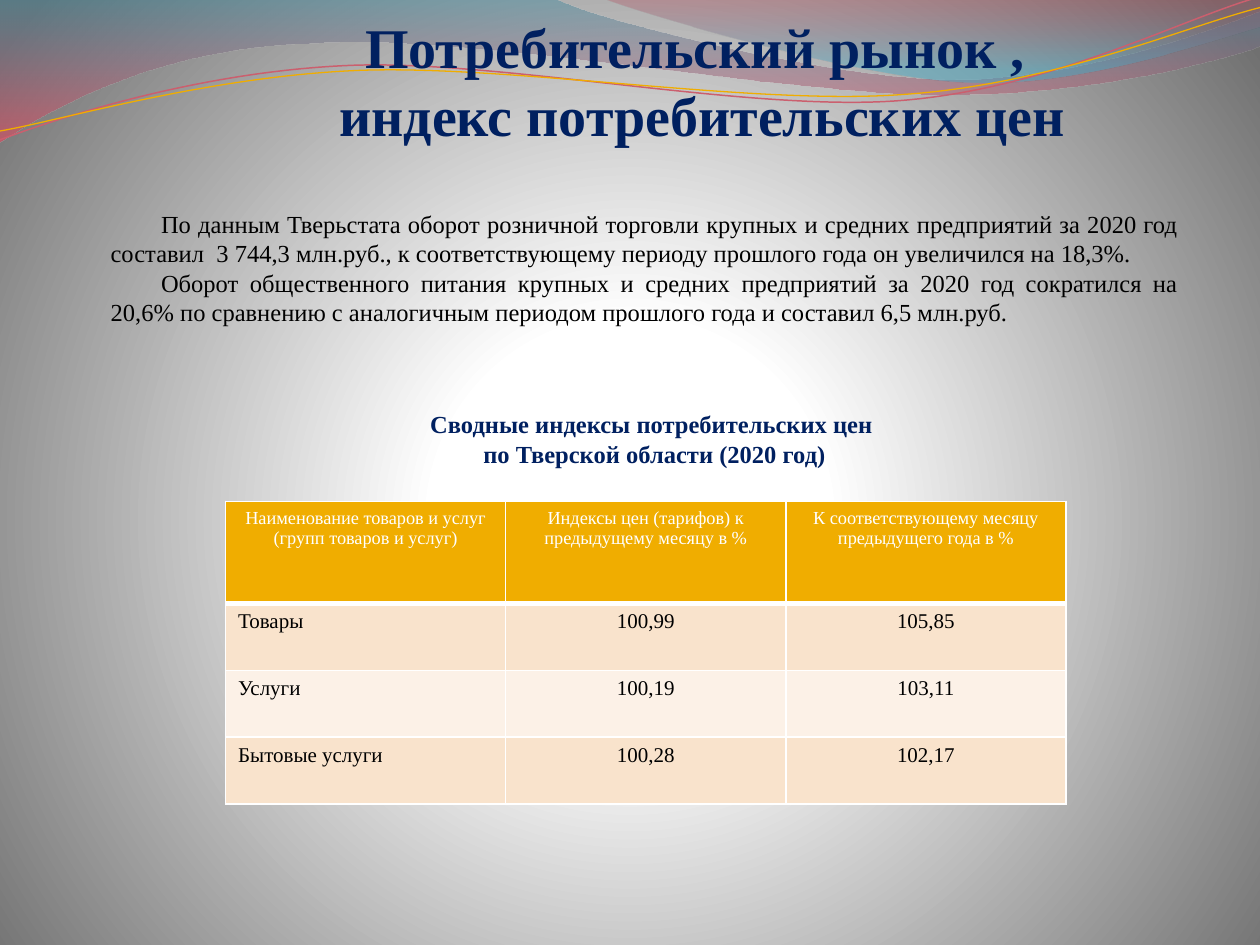
from dataclasses import dataclass

from lxml import etree
from pptx import Presentation
from pptx.dml.color import RGBColor
from pptx.enum import text as tx
from pptx.oxml import parse_xml
from pptx.oxml import ns
from pptx.util import Inches, Pt


@dataclass(frozen=True)
class Theme:
    """Colours, font and type sizes of the slide."""
    font: str = "Times New Roman"
    navy: str = "002060"
    ink: str = "000000"
    white: str = "FFFFFF"
    grey: str = "707070"
    gold: str = "F0AD00"
    rose: str = "CB5F6E"
    bands: tuple = ("F9E3CC", "FCF1E7")
    wide: tuple = ((0, "3F8A9F", 45), (100, "EF445B", 55))
    crest: tuple = ((0, "B84253", 30), (80, "42ABC7", 45))
    title: float = 32
    body: float = 14
    cell: float = 12
    head: float = 10.5


T = Theme()
MID, LEFT, FULL = tx.PP_ALIGN.CENTER, tx.PP_ALIGN.LEFT, tx.PP_ALIGN.JUSTIFY

WIDE = [(0, 0), (4.4, -0.01), (4.76, 0.17, 6.64, 0.63, 7.58, 0.63),
        (8.53, 0.63, 9.58, 0.26, 10, 0.09), (10.01, 0.36),
        (9.83, 0.44, 8.7, 0.76, 7.46, 0.75),
        (6.22, 0.75, 3.82, 0.28, 2.57, 0.34),
        (1.29, 0.36, 0.46, 0.83, -0.01, 1.13), (0, 0)]
CREST = [(4.79, -0.01), (5.09, 0.11, 6.82, 0.62, 7.69, 0.65),
         (8.56, 0.69, 9.61, 0.32, 10, 0.21), (10, 0), (4.79, -0.01)]
ROSE = [(0, 1.11), (0.48, 0.93, 1.58, 0.57, 2.77, 0.52),
        (3.95, 0.47, 5.93, 0.89, 7.13, 0.8),
        (8.33, 0.71, 9.38, 0.15, 9.98, -0.02)]
GOLD = [(0, 1.04), (0.47, 0.96, 1.64, 0.61, 2.83, 0.56),
        (4.03, 0.51, 5.97, 0.84, 7.17, 0.75),
        (8.36, 0.67, 9.41, 0.21, 10, 0.06)]

NEWS = [
    "По данным Тверьстата оборот розничной торговли крупных и средних "
    "предприятий за 2020 год составил  3 744,3 млн.руб., к соответствующему "
    "периоду прошлого года он увеличился на 18,3%.",
    "Оборот общественного питания крупных и средних предприятий за 2020 год "
    "сократился на 20,6% по сравнению с аналогичным периодом прошлого года "
    "и составил 6,5 млн.руб.",
]
ROWS = [
    ("Наименование товаров и услуг\n(групп товаров и услуг)",
     "Индексы цен (тарифов) к предыдущему месяцу в %",
     "К соответствующему месяцу предыдущего года в %"),
    ("Товары", "100,99", "105,85"),
    ("Услуги", "100,19", "103,11"),
    ("Бытовые услуги", "100,28", "102,17"),
]


def rgb(hue):
    """Turn a hex string into a colour."""
    return RGBColor.from_string(hue)


def style(frame, size, hue, align, bold=False):
    """Format every paragraph of a text frame alike."""
    for para in frame.paragraphs:
        para.alignment = align
        font = para.font
        font.name, font.size, font.bold = T.font, Pt(size), bold
        font.color.rgb = rgb(hue)


def grade(fill, root, stops, shade):
    """Give a fill the colour stops (percent, hue, alpha) and a shade."""
    fill.gradient()
    old = next(root.iter(ns.qn("a:gradFill")))
    marks = "".join(
        f'<a:gs pos="{at * 1000}"><a:srgbClr val="{hue}">'
        f'<a:alpha val="{alpha * 1000}"/></a:srgbClr></a:gs>'
        for at, hue, alpha in stops)
    new = parse_xml(f'<a:gradFill {ns.nsdecls("a")} rotWithShape="1">'
                    f'<a:gsLst>{marks}</a:gsLst>{shade}</a:gradFill>')
    old.getparent().replace(old, new)


def curve(slide, parts, close):
    """Draw an outline of straight and cubic parts."""
    first, *rest = [(Inches(part[i]), Inches(part[i + 1]))
                    for part in parts for i in range(0, len(part), 2)]
    pen = slide.shapes.build_freeform(*first)
    pen.add_line_segments(rest, close=close)
    shape = pen.convert_to_shape()
    shape.shadow.inherit = False
    legs = iter(list(shape.element.iter(ns.qn("a:lnTo"))))
    for part in parts[1:]:
        leg = next(legs)
        if len(part) == 6:
            bend = etree.Element(ns.qn("a:cubicBezTo"))
            leg.addprevious(bend)
            for step in (leg, next(legs), next(legs)):
                bend.append(step[0])
                step.getparent().remove(step)
    return shape


def waves(slide):
    """Draw the shaded background, two waves and two thin lines."""
    back = slide.background
    grade(back.fill, slide.element,
          ((0, T.white, 100), (25, T.white, 100), (100, T.grey, 100)),
          '<a:path path="circle"><a:fillToRect l="10000" t="110000" '
          'r="10000" b="100000"/></a:path>')
    for parts, stops in ((WIDE, T.wide), (CREST, T.crest)):
        wave = curve(slide, parts, True)
        wave.line.fill.background()
        grade(wave.fill, wave.element, stops,
              '<a:lin ang="5400000" scaled="0"/>')
    for parts, hue, width in ((ROSE, T.rose, 0.85), (GOLD, T.gold, 0.75)):
        line = curve(slide, parts, False)
        line.fill.background()
        line.line.color.rgb = rgb(hue)
        line.line.width = Pt(width)


def title(slide, x, y, w, h):
    """Place the slide title above the waves."""
    shape = slide.shapes.title
    slide.shapes._spTree.append(shape.element)
    shape.left, shape.top, shape.width, shape.height = map(
        Inches, (x, y, w, h))
    frame = shape.text_frame
    frame.text = "Потребительский рынок , \vиндекс потребительских цен"
    frame.auto_size = tx.MSO_AUTO_SIZE.NONE
    frame.vertical_anchor = tx.MSO_ANCHOR.BOTTOM
    frame.margin_left = frame.margin_top = frame.margin_bottom = 0
    frame.margin_right = Inches(0.02)
    style(frame, T.title, T.navy, MID, True)


def note(slide, x, y, w, h, lines, hue, align, bold=False, indent=0):
    """Place a wrapped text box, one paragraph per line."""
    box = slide.shapes.add_textbox(*map(Inches, (x, y, w, h)))
    frame = box.text_frame
    frame.word_wrap = True
    frame.text = "\n".join(lines)
    style(frame, T.body, hue, align, bold)
    if indent:
        for para in frame.paragraphs:
            props = para._p.get_or_add_pPr()
            props.set("marL", "0")
            props.set("indent", str(Inches(indent)))


def edge(cell, base):
    """Draw white cell borders, with the given width at the base."""
    props = cell._tc.get_or_add_tcPr()
    for i, side in enumerate("LRTB"):
        width = Pt(base if side == "B" else 1)
        line = etree.Element(ns.qn(f"a:ln{side}"), w=str(width))
        solid = etree.SubElement(line, ns.qn("a:solidFill"))
        etree.SubElement(solid, ns.qn("a:srgbClr"), val=T.white)
        props.insert(i, line)


def prices(slide, x, y, w, h, top=0.81):
    """Place the price index table with a taller header row."""
    grid = slide.shapes.add_table(
        len(ROWS), len(ROWS[0]), *map(Inches, (x, y, w, h))).table
    for r, row in enumerate(ROWS):
        head = r == 0
        grid.rows[r].height = Inches(
            top if head else (h - top) / (len(ROWS) - 1))
        for c, words in enumerate(row):
            cell = grid.cell(r, c)
            cell.text = words
            cell.fill.solid()
            cell.fill.fore_color.rgb = rgb(
                T.gold if head else T.bands[(r - 1) % 2])
            style(cell.text_frame, T.head if head else T.cell,
                  T.white if head else T.ink, MID if head or c else LEFT)
            edge(cell, 3 if head else 1)


def main():
    """Build the slide and save it."""
    deck = Presentation()
    deck.slide_width, deck.slide_height = Inches(10), Inches(7.5)
    slide = deck.slides.add_slide(deck.slide_layouts[0])
    spare = slide.placeholders[1].element
    spare.getparent().remove(spare)
    waves(slide)
    title(slide, 1.72, 0.31, 7.73, 0.86)
    note(slide, 0.78, 1.61, 8.67, 1.28, NEWS, T.ink, FULL, indent=0.4)
    prices(slide, 1.79, 3.98, 6.67, 2.4)
    note(slide, 2.97, 3.2, 4.45, 0.57,
         ["Сводные индексы потребительских цен ",
          "по Тверской области (2020 год)"], T.navy, MID, True)
    deck.save("out.pptx")


if __name__ == "__main__":
    main()
